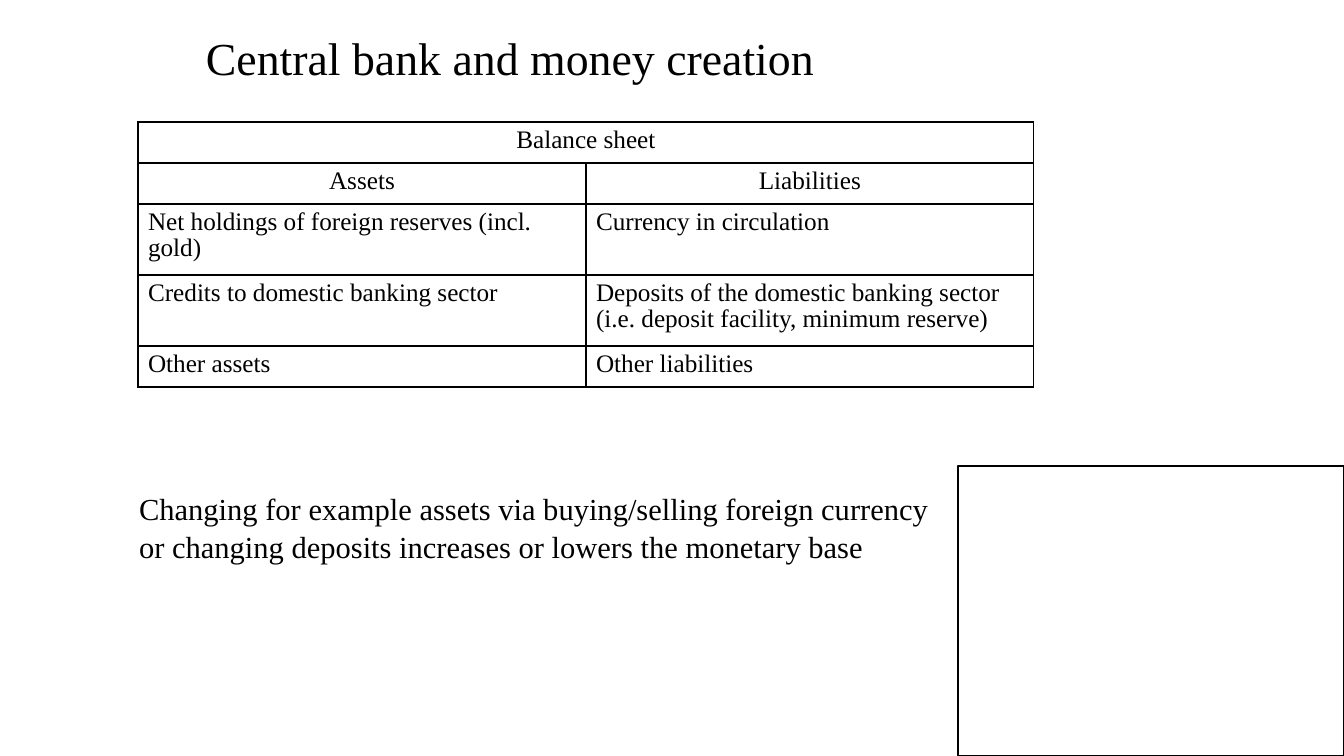
import pptx
import pptx.dml.color
import pptx.enum.text
import pptx.oxml
import pptx.oxml.ns
import pptx.util
from dataclasses import dataclass

EMU_PER_PX = 914400 / 100.8
CENTER = pptx.enum.text.PP_ALIGN.CENTER
LEFT = pptx.enum.text.PP_ALIGN.LEFT


@dataclass(frozen=True)
class Theme:
    font: str = "Times New Roman"
    ink: str = "000000"
    title: float = 32.7
    body: float = 21.8
    cell: float = 18
    line: float = 1
    inset_x: int = 9
    inset_y: int = 4


def px(n):
    return pptx.util.Emu(round(n * EMU_PER_PX))


def write(tf, text, theme, size, align=LEFT, spacing=None, indent=0):
    p = tf.paragraphs[0]
    if indent:
        p._p.get_or_add_pPr().set("marL", str(px(indent)))
    p.alignment = align
    p.line_spacing = spacing
    r = p.add_run()
    r.text = text
    r.font.name = theme.font
    r.font.size = pptx.util.Pt(size)
    r.font.color.rgb = pptx.dml.color.RGBColor.from_string(theme.ink)


class SlideBuilder:
    def __init__(self, prs, theme):
        self.theme = theme
        self.slide = prs.slides.add_slide(prs.slide_layouts[6])

    def text(self, box, text, size, wrap=True, **fmt):
        sp = self.slide.shapes.add_textbox(*map(px, box))
        tf = sp.text_frame
        tf.word_wrap = wrap
        tf.margin_left = tf.margin_right = px(self.theme.inset_x)
        tf.margin_top = tf.margin_bottom = px(self.theme.inset_y)
        write(tf, text, self.theme, size, **fmt)

    def frame(self, box):
        rect = pptx.enum.shapes.MSO_SHAPE.RECTANGLE
        sp = self.slide.shapes.add_shape(rect, *map(px, box))
        sp.shadow.inherit = False
        sp.fill.background()
        sp.line.color.rgb = pptx.dml.color.RGBColor.from_string(self.theme.ink)
        sp.line.width = pptx.util.Pt(self.theme.line)

    def border(self, cell):
        tc_pr = cell._tc.get_or_add_tcPr()
        width = pptx.util.Pt(self.theme.line)
        ns = pptx.oxml.ns.nsdecls("a")
        for i, side in enumerate(("lnL", "lnR", "lnT", "lnB")):
            tc_pr.insert(i, pptx.oxml.parse_xml(
                f'<a:{side} {ns} w="{width}"><a:solidFill>'
                f'<a:srgbClr val="{self.theme.ink}"/></a:solidFill></a:{side}>'))

    def table(self, left, top, col_width, heights, rows, header_rows):
        cols = len(rows[-1])
        gf = self.slide.shapes.add_table(
            len(rows), cols, px(left), px(top),
            px(col_width * cols), px(sum(heights)))
        tbl = gf.table
        tbl.first_row = tbl.horz_banding = False
        for col in tbl.columns:
            col.width = px(col_width)
        for i, (height, texts) in enumerate(zip(heights, rows)):
            tbl.rows[i].height = px(height)
            if len(texts) < cols:
                tbl.cell(i, 0).merge(tbl.cell(i, cols - 1))
            for cell in tbl.rows[i].cells:
                cell.fill.background()
                self.border(cell)
            for j, text in enumerate(texts):
                write(tbl.cell(i, j).text_frame, text, self.theme,
                      self.theme.cell, spacing=0.95,
                      align=CENTER if i < header_rows else LEFT)


def main():
    prs = pptx.Presentation()
    prs.slide_width, prs.slide_height = px(1344), px(756)
    theme = Theme()
    s = SlideBuilder(prs, theme)
    s.text((197, 26, 631, 62), "Central bank and money creation",
           theme.title, wrap=False)
    s.text((80, 484, 879, 108),
           "Changing for example assets via buying/selling foreign currency "
           "or changing deposits increases or lowers the monetary base",
           theme.body, spacing=1.05, indent=50)
    s.frame((958, 466, 386, 290))
    s.table(138, 122, 448, (41, 41, 71, 71, 41), (
        ("Balance sheet",),
        ("Assets", "Liabilities"),
        ("Net holdings of foreign reserves (incl. gold)",
         "Currency in circulation"),
        ("Credits to domestic banking sector",
         "Deposits of the domestic banking sector "
         "(i.e. deposit facility, minimum reserve)"),
        ("Other assets", "Other liabilities"),
    ), header_rows=2)
    prs.save("out.pptx")


if __name__ == "__main__":
    main()
